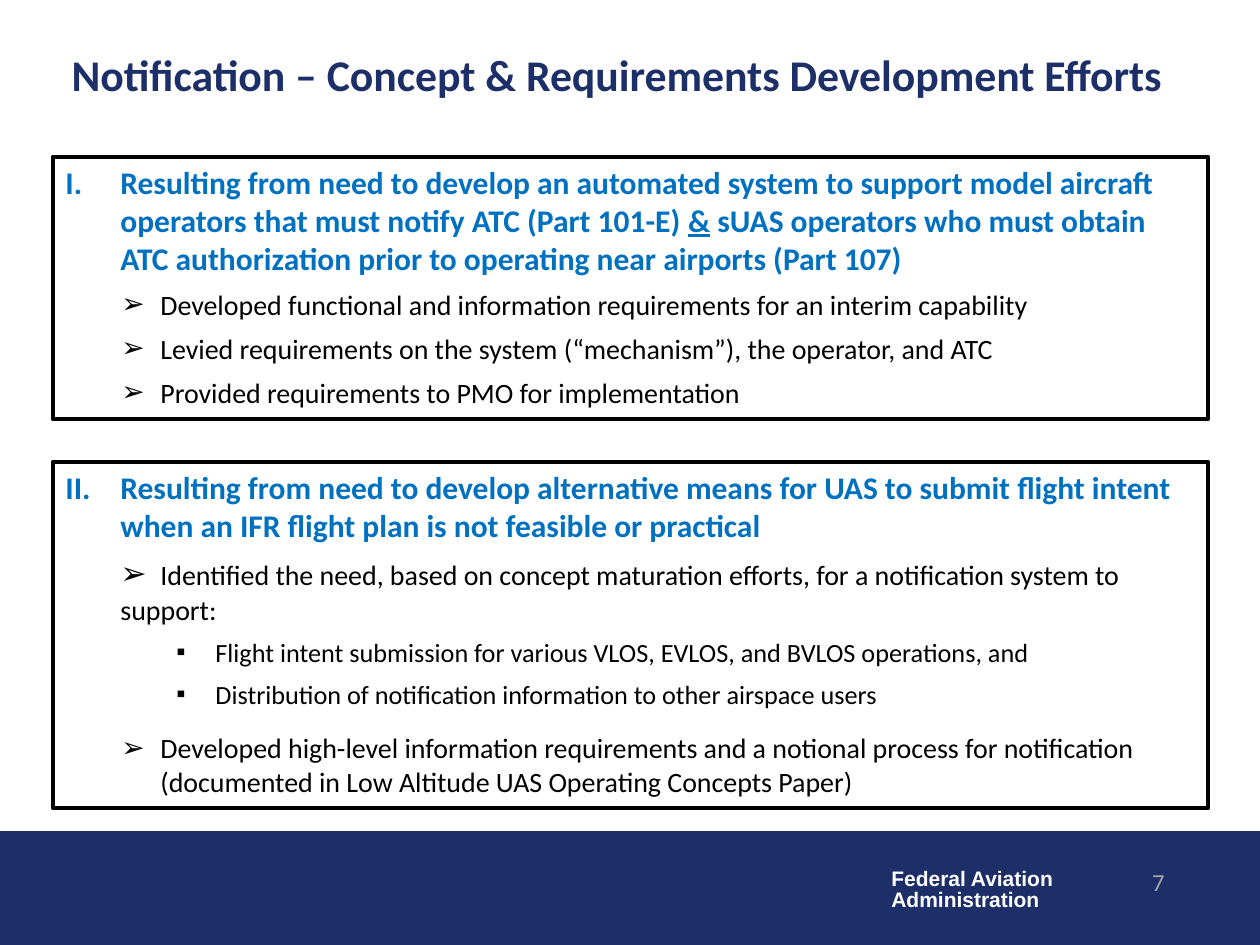
from lxml.etree import SubElement
from pptx import Presentation
from pptx.dml.color import RGBColor
from pptx.enum.shapes import MSO_SHAPE as Shape
from pptx.enum.text import MSO_ANCHOR as Anchor, PP_ALIGN as Align
from pptx.oxml.ns import qn
from pptx.util import Emu, Pt

PX_PER_INCH = 126
NAVY, BLUE, BLACK, WHITE, GREY = "1D2F68", "0070C0", "000000", "FFFFFF", "A6A6A6"


def px(length):
    return Emu(round(length * 914400 / PX_PER_INCH))


def rgb(value):
    return RGBColor.from_string(value)


class SlideBuilder:
    def __init__(self, deck, font="Calibri"):
        self.font = font
        self.slide = deck.slides.add_slide(deck.slide_layouts[5])

    def style(self, para, size, color, bold=False, font=None):
        para.font.name = font or self.font
        para.font.size = Pt(size)
        para.font.bold = bold
        para.font.color.rgb = rgb(color)

    def title(self, text, left, top, width, height):
        title = self.slide.shapes.title
        title.left, title.top, title.width, title.height = map(px, (left, top, width, height))
        title.text_frame.vertical_anchor = Anchor.MIDDLE
        para = title.text_frame.paragraphs[0]
        para.text = text
        para.alignment = Align.LEFT
        self.style(para, 25, NAVY, bold=True)

    def rectangle(self, left, top, width, height, line, line_width, fill=None):
        box = self.slide.shapes.add_shape(Shape.RECTANGLE, *map(px, (left, top, width, height)))
        box.shadow.inherit = False
        box.line.color.rgb = rgb(line)
        box.line.width = Pt(line_width)
        if fill:
            box.fill.solid()
            box.fill.fore_color.rgb = rgb(fill)
        else:
            box.fill.background()
        return box

    def label(self, lines, left, top, width, height, size, color, bold=False,
              font=None, align=Align.LEFT, spacing=1.0, wrap=True):
        box = self.slide.shapes.add_textbox(*map(px, (left, top, width, height)))
        frame = box.text_frame
        frame.word_wrap = wrap
        frame.text = "\n".join(lines)
        for para in frame.paragraphs:
            para.alignment = align
            para.line_spacing = spacing
            self.style(para, size, color, bold, font)

    def panel(self, top, height, number, heading, points):
        """Draw an outlined box with a Roman-numbered heading and its points."""
        frame = self.rectangle(53, top, 1155, height, BLACK, 2.75).text_frame
        frame.word_wrap = True
        frame.vertical_anchor = Anchor.TOP
        para = frame.paragraphs[0]
        self.marker(para, 55, 55, number=number)
        self.style(para, 18, BLUE, bold=True)
        self.spans(para, heading)
        for point in points:
            self.point(frame.add_paragraph(), **point)

    def point(self, para, text, size=16, bullet="➢", margin=95, hang=39, before=6, tab=None):
        para.space_before = Pt(before)
        self.marker(para, margin, hang, bullet, tab=tab)
        self.style(para, size, BLACK)
        self.spans(para, text)

    def marker(self, para, margin, hang, bullet=None, number=None, tab=None):
        """Set the hanging indent, the bullet or Roman number, and a tab stop."""
        para.alignment = Align.LEFT
        properties = para._p.get_or_add_pPr()
        properties.set("marL", str(px(margin)))
        properties.set("indent", str(px(-hang)))
        if number:
            SubElement(properties, qn("a:buAutoNum"), type="romanUcPeriod", startAt=str(number))
        else:
            SubElement(properties, qn("a:buFont"), typeface="Arial")
            SubElement(properties, qn("a:buChar"), char=bullet)
        if tab:
            stops = SubElement(properties, qn("a:tabLst"))
            SubElement(stops, qn("a:tab"), pos=str(px(tab)), algn="l")

    def spans(self, para, parts):
        """Add runs; each part is a text and the font attributes that differ."""
        for text, changes in parts:
            span = para.add_run()
            span.text = text
            for name, value in changes.items():
                setattr(span.font, name, value)


def plain(text):
    return [(text, {})]


def main():
    deck = Presentation()
    deck.slide_width, deck.slide_height = px(1260), px(945)
    page = SlideBuilder(deck)

    page.rectangle(0, 832, 1260, 112, NAVY, 0.75, fill=NAVY)
    page.label(["Federal Aviation", "Administration"], 879, 863, 189, 55, 12, WHITE,
               bold=True, font="Arial", spacing=0.85, wrap=False)
    page.title("Notification – Concept & Requirements Development Efforts", 59, 32, 1168, 84)

    page.panel(157, 262, 1, [
        ("Resulting from need to develop an automated system to support model aircraft "
         "operators that must notify ATC (Part 101-E) ", {}),
        ("&", {"underline": True}),
        (" sUAS operators who must obtain ATC authorization prior to operating near "
         "airports (Part 107)", {}),
    ], [{"text": plain(text)} for text in (
        "Developed functional and information requirements for an interim capability",
        "Levied requirements on the system (“mechanism”), the operator, and ATC",
        "Provided requirements to PMO for implementation",
    )])

    detail = {"size": 15, "bullet": "▪", "margin": 150}
    page.panel(462, 346, 2, plain(
        "Resulting from need to develop alternative means for UAS to submit flight intent "
        "when an IFR flight plan is not feasible or practical"
    ), [
        {"text": [("\t", {"size": Pt(18)}),
                  ("Identified the need, based on concept maturation efforts, for a "
                   "notification system to support:", {})],
         "margin": 55, "hang": 0, "tab": 95},
        {"text": plain("Flight intent submission for various VLOS, EVLOS, and BVLOS "
                       "operations, and"), **detail},
        {"text": plain("Distribution of notification information to other airspace users"),
         **detail},
        {"text": plain("Developed high-level information requirements and a notional process "
                       "for notification (documented in Low Altitude UAS Operating Concepts "
                       "Paper)"), "before": 12},
    ])
    page.label(["7"], 915, 861, 262, 63, 14, GREY, align=Align.RIGHT)

    deck.save("out.pptx")


if __name__ == "__main__":
    main()
